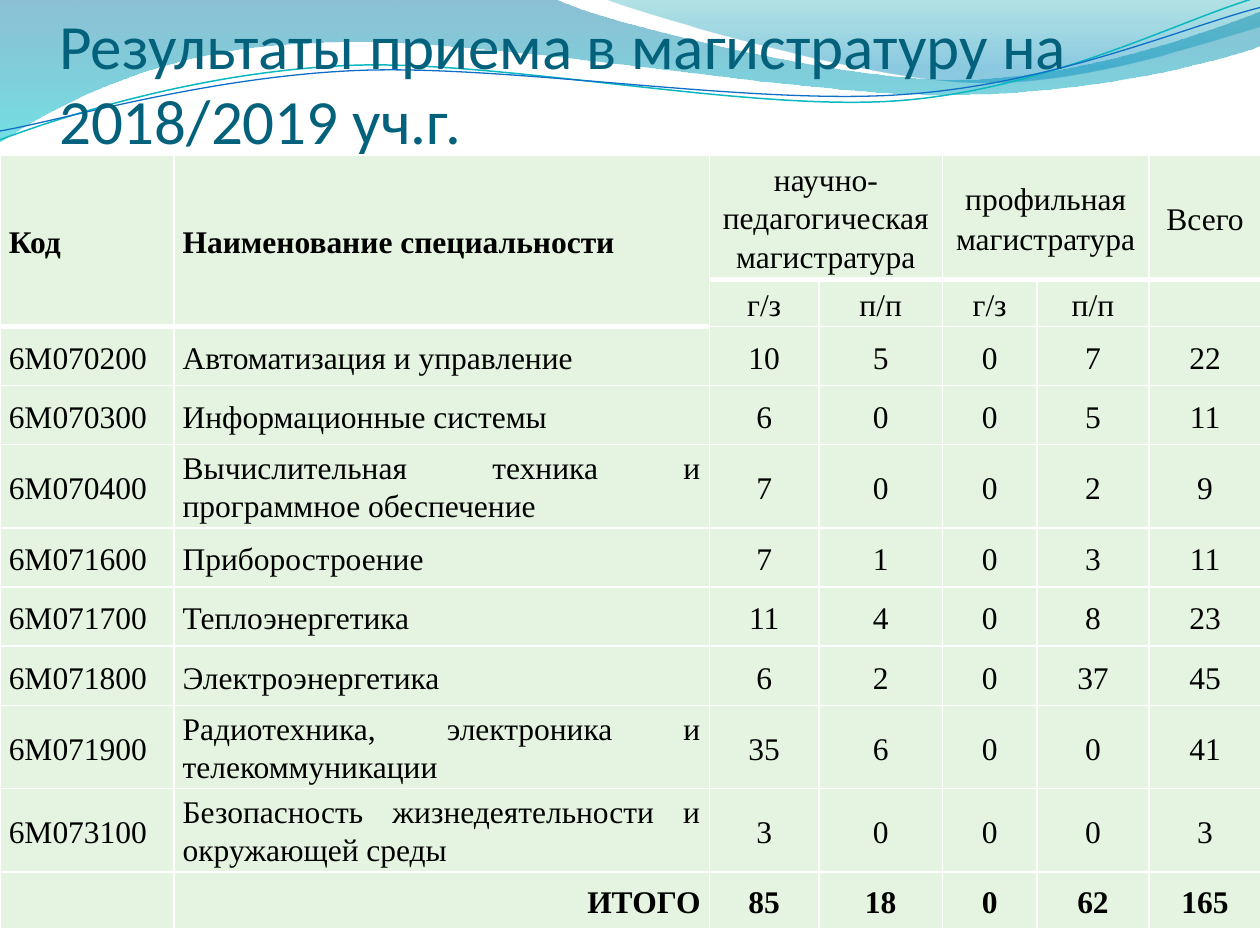
from math import cos, radians, sin

from lxml.etree import SubElement
from pptx import Presentation
from pptx.dml.color import RGBColor
from pptx.enum.text import MSO_ANCHOR as Anchor, PP_ALIGN as Align
from pptx.oxml import parse_xml
from pptx.oxml.ns import nsdecls, qn
from pptx.util import Inches, Pt


def color(code):
    return RGBColor.from_string(code)


def draw_wave(page, start, segments, closed):
    """Draw an outline of line ends (x, y) and Bezier curves (two handles, end)."""
    ends = [(Inches(s[-2]), Inches(s[-1])) for s in segments]
    builder = page.shapes.build_freeform(Inches(start[0]), Inches(start[1]))
    builder.add_line_segments(ends, close=closed)
    wave = builder.convert_to_shape()
    wave.shadow.inherit = False
    lines = list(wave._element.iter(qn("a:lnTo")))
    for line, segment in zip(lines, segments):
        if len(segment) == 6:
            line.tag = qn("a:cubicBezTo")
            for place in (0, 2):
                x, y = segment[place:place + 2]
                handle = SubElement(line, qn("a:pt"), x=str(Inches(x) - wave.left),
                                    y=str(Inches(y) - wave.top))
                line.insert(place // 2, handle)
    return wave


deck = Presentation()
deck.slide_width, deck.slide_height = Inches(10), Inches(7.5)
page = deck.slides.add_slide(deck.slide_layouts[6])

# Translucent bands: start, segments, gradient stops (percent, colour, opacity)
bands = [
    ((0, 0),
     [(4.4, -0.01), (4.76, 0.17, 6.64, 0.63, 7.58, 0.63),
      (8.53, 0.63, 9.58, 0.26, 10, 0.09), (10.01, 0.36),
      (9.83, 0.44, 8.7, 0.76, 7.46, 0.75), (6.22, 0.75, 3.82, 0.28, 2.57, 0.34),
      (1.29, 0.36, 0.46, 0.83, -0.01, 1.13)],
     [(0, "0074A1", 45), (100, "00C6CF", 55)]),
    ((4.79, -0.01),
     [(5.09, 0.11, 6.82, 0.62, 7.69, 0.65), (8.56, 0.69, 9.61, 0.32, 10, 0.21), (10, 0)],
     [(0, "00A1A9", 30), (80, "008BBF", 45)]),
]
for start, segments, stops in bands:
    band = draw_wave(page, start, segments, True)
    band.line.fill.background()
    stop_xml = "".join(
        f'<a:gs pos="{pos * 1000}"><a:srgbClr val="{code}">'
        f'<a:alpha val="{opacity * 1000}"/></a:srgbClr></a:gs>'
        for pos, code, opacity in stops)
    gradient = parse_xml(f'<a:gradFill {nsdecls("a")} rotWithShape="1"><a:gsLst>{stop_xml}'
                         '</a:gsLst><a:lin ang="5400000" scaled="0"/></a:gradFill>')
    band._element.spPr.find(qn("a:custGeom")).addnext(gradient)

# Thin wavy lines as they lie after tilting: start, segments, centre height, colour, width
threads = [
    ((0, 1.11),
     [(0.48, 0.93, 1.58, 0.57, 2.77, 0.52), (3.95, 0.47, 5.93, 0.89, 7.13, 0.8),
      (8.33, 0.71, 9.38, 0.15, 9.98, -0.02)], 0.57, "0AB8BF", 0.85),
    ((0, 1.04),
     [(0.47, 0.96, 1.64, 0.61, 2.83, 0.56), (4.03, 0.51, 5.97, 0.84, 7.17, 0.75),
      (8.36, 0.67, 9.41, 0.21, 10, 0.06)], 0.59, "0F6FC6", 0.75),
]
tilt = 2.7
turn_cos, turn_sin = cos(radians(tilt)), sin(radians(tilt))
for start, segments, middle, code, width in threads:
    level = []
    for segment in [start, *segments]:
        offsets = [(x - 5, y - middle) for x, y in zip(segment[::2], segment[1::2])]
        level.append([value for x, y in offsets for value in
                      (5 + x * turn_cos - y * turn_sin, middle + x * turn_sin + y * turn_cos)])
    thread = draw_wave(page, level[0], level[1:], False)
    thread.rotation = 360 - tilt
    thread.fill.background()
    thread.line.color.rgb = color(code)
    thread.line.width = Pt(width)

title_box = page.shapes.add_textbox(Inches(0.47), 0, Inches(9), Inches(1.25))
frame = title_box.text_frame
frame.word_wrap = True
frame.vertical_anchor = Anchor.BOTTOM
frame.margin_left = frame.margin_right = frame.margin_bottom = 0
frame.margin_top = Inches(0.05)
span = frame.paragraphs[0].add_run()
span.text = "Результаты приема в магистратуру на 2018/2019 уч.г."
span.font.name, span.font.size = "Calibri", Pt(36)
span.font.color.rgb = color("04617B")

rows = [
    ["Код", "Наименование специальности", "научно-педагогическая магистратура", "",
     "профильная магистратура", "", "Всего"],
    ["", "", "г/з", "п/п", "г/з", "п/п", ""],
    ["6М070200", "Автоматизация и управление", 10, 5, 0, 7, 22],
    ["6М070300", "Информационные системы", 6, 0, 0, 5, 11],
    ["6М070400", "Вычислительная техника и программное обеспечение", 7, 0, 0, 2, 9],
    ["6М071600", "Приборостроение", 7, 1, 0, 3, 11],
    ["6М071700", "Теплоэнергетика", 11, 4, 0, 8, 23],
    ["6М071800", "Электроэнергетика", 6, 2, 0, 37, 45],
    ["6М071900", "Радиотехника, электроника и телекоммуникации", 35, 6, 0, 0, 41],
    ["6М073100", "Безопасность жизнедеятельности и окружающей среды", 3, 0, 0, 0, 3],
    ["", "ИТОГО", 85, 18, 0, 62, 165],
]
widths = [1.38, 4.25, 0.87, 0.98, 0.75, 0.89, 0.89]
heights = [0.95, 0.37, 0.47, 0.47, 0.66, 0.47, 0.47, 0.47, 0.66, 0.66, 0.45]
last = len(rows) - 1
table = page.shapes.add_table(len(rows), len(widths), 0, Inches(1.23),
                              Inches(sum(widths)), Inches(sum(heights))).table
table.first_row = table.horz_banding = False
for column, width in zip(table.columns, widths):
    column.width = Inches(width)
for line, height in zip(table.rows, heights):
    line.height = Inches(height)
for top, left, bottom, right in [(0, 0, 1, 0), (0, 1, 1, 1), (0, 2, 0, 3), (0, 4, 0, 5)]:
    table.cell(top, left).merge(table.cell(bottom, right))

for r, values in enumerate(rows):
    for c, value in enumerate(values):
        cell = table.cell(r, c)
        cell.vertical_anchor = Anchor.MIDDLE
        cell.margin_left = cell.margin_right = Inches(0.07)
        cell.margin_top = cell.margin_bottom = 0
        cell.fill.solid()
        cell.fill.fore_color.rgb = color("E5F4E0")

        # The header's lower edge is heavy: below row 1 for the tall cells, else below row 0
        header_end = 1 if c < 2 else 0
        edges = {"L": 1, "R": 1, "T": 3 if r == header_end + 1 else 1,
                 "B": 3 if r in (0, header_end) else 1}
        props = cell._tc.get_or_add_tcPr()
        for place, (side, points) in enumerate(edges.items()):
            border = SubElement(props, qn(f"a:ln{side}"), w=str(Pt(points)))
            SubElement(SubElement(border, qn("a:solidFill")), qn("a:srgbClr"), val="FFFFFF")
            props.insert(place, border)

        if value == "":
            continue
        para = cell.text_frame.paragraphs[0]
        para.alignment = Align.CENTER if c > 1 else Align.RIGHT if r == last else Align.JUSTIFY
        # Wrapped text is set a little tighter so that it fits its row
        para.line_spacing = 1.1 if len(str(value)) > 30 else 1.15
        para.space_after = Pt(10)
        span = para.add_run()
        span.text = str(value)
        span.font.name, span.font.size = "Times New Roman", Pt(18)
        span.font.bold = r == last or (r == 0 and c < 2)
        span.font.color.rgb = color("000000")

deck.save("out.pptx")
